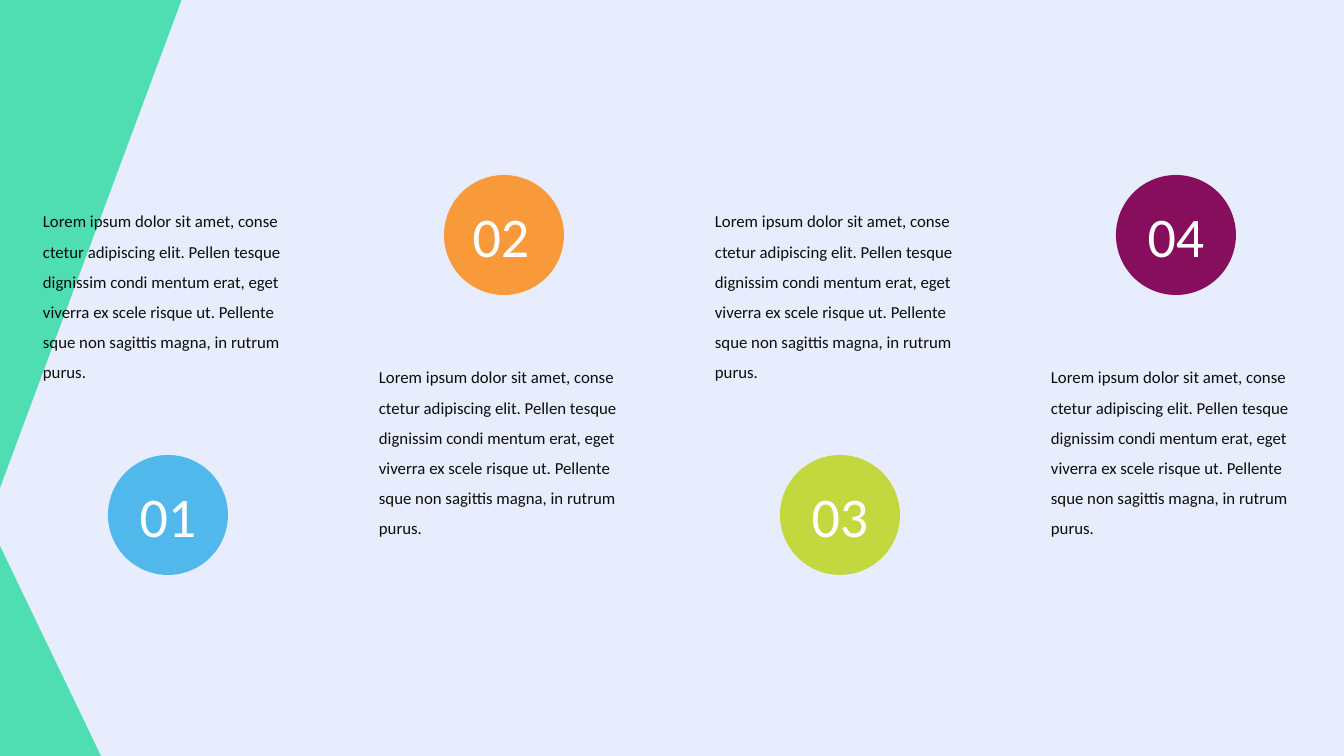
from pptx import Presentation
from pptx.dml.color import RGBColor
from pptx.enum.shapes import MSO_SHAPE
from pptx.enum.text import MSO_AUTO_SIZE, PP_ALIGN
from pptx.util import Emu, Pt

BODY = ("Lorem ipsum dolor sit amet, conse ctetur adipiscing elit. Pellen tesque "
        "dignissim condi mentum erat, eget viverra ex scele risque ut. Pellente "
        "sque non sagittis magna, in rutrum purus.")
STEPS = [
    ("01", "51B8EB", 0),
    ("02", "F89A3A", -3),
    ("03", "C3D83F", 0),
    ("04", "870E5D", 0),
]
BACKGROUND, GREEN, INK, WHITE = "E7EDFD", "4FDEB2", "0D0D0D", "FFFFFF"
SLIDE_W, SLIDE_H = 1344, 756
PITCH = SLIDE_W // len(STEPS)
TEXT_LEFT, TEXT_W, TEXT_H = 33, 268, 190
CIRCLE_LEFT, CIRCLE = 108, 120
TEXT_TOPS = (196, 352)
CIRCLE_TOPS = (455, 175)
NUMBER_DROP, NUMBER_H = 22, 78


def px(n):
    return Emu(round(n * 914400 / 100.8))


def color(value):
    return RGBColor.from_string(value)


def add_solid(s, kind, left, top, width, height, fill):
    sp = s.shapes.add_shape(kind, px(left), px(top), px(width), px(height))
    sp.shadow.inherit = False
    sp.fill.solid()
    sp.fill.fore_color.rgb = color(fill)
    sp.line.fill.background()
    return sp


def add_text(s, text, left, top, width, height, size, ink,
             align=PP_ALIGN.LEFT, spacing=None):
    sp = s.shapes.add_textbox(px(left), px(top), px(width), px(height))
    tf = sp.text_frame
    tf.word_wrap = True
    tf.auto_size = MSO_AUTO_SIZE.SHAPE_TO_FIT_TEXT
    p = tf.paragraphs[0]
    p.alignment = align
    p.line_spacing = spacing
    r = p.add_run()
    r.text = text
    r.font.name = "Calibri"
    r.font.size = Pt(size)
    r.font.color.rgb = color(ink)


def main():
    prs = Presentation()
    prs.slide_width, prs.slide_height = px(SLIDE_W), px(SLIDE_H)
    s = prs.slides.add_slide(prs.slide_layouts[6])
    s.background.fill.solid()
    s.background.fill.fore_color.rgb = color(BACKGROUND)

    add_solid(s, MSO_SHAPE.RIGHT_TRIANGLE, 0, 546, 101, 210, GREEN)
    upper = add_solid(s, MSO_SHAPE.RIGHT_TRIANGLE, 0, -1, 182, 489, GREEN)
    upper._element.spPr.xfrm.set("flipV", "1")

    for i, (number, fill, shift) in enumerate(STEPS):
        x = i * PITCH
        circle_left, circle_top = CIRCLE_LEFT + x, CIRCLE_TOPS[i % 2]
        add_text(s, BODY, TEXT_LEFT + x, TEXT_TOPS[i % 2], TEXT_W, TEXT_H,
                 12, INK, spacing=1.5)
        add_solid(s, MSO_SHAPE.OVAL, circle_left, circle_top, CIRCLE, CIRCLE, fill)
        add_text(s, number, circle_left + shift, circle_top + NUMBER_DROP,
                 CIRCLE, NUMBER_H, 40, WHITE, align=PP_ALIGN.CENTER)

    prs.save("out.pptx")


if __name__ == "__main__":
    main()
